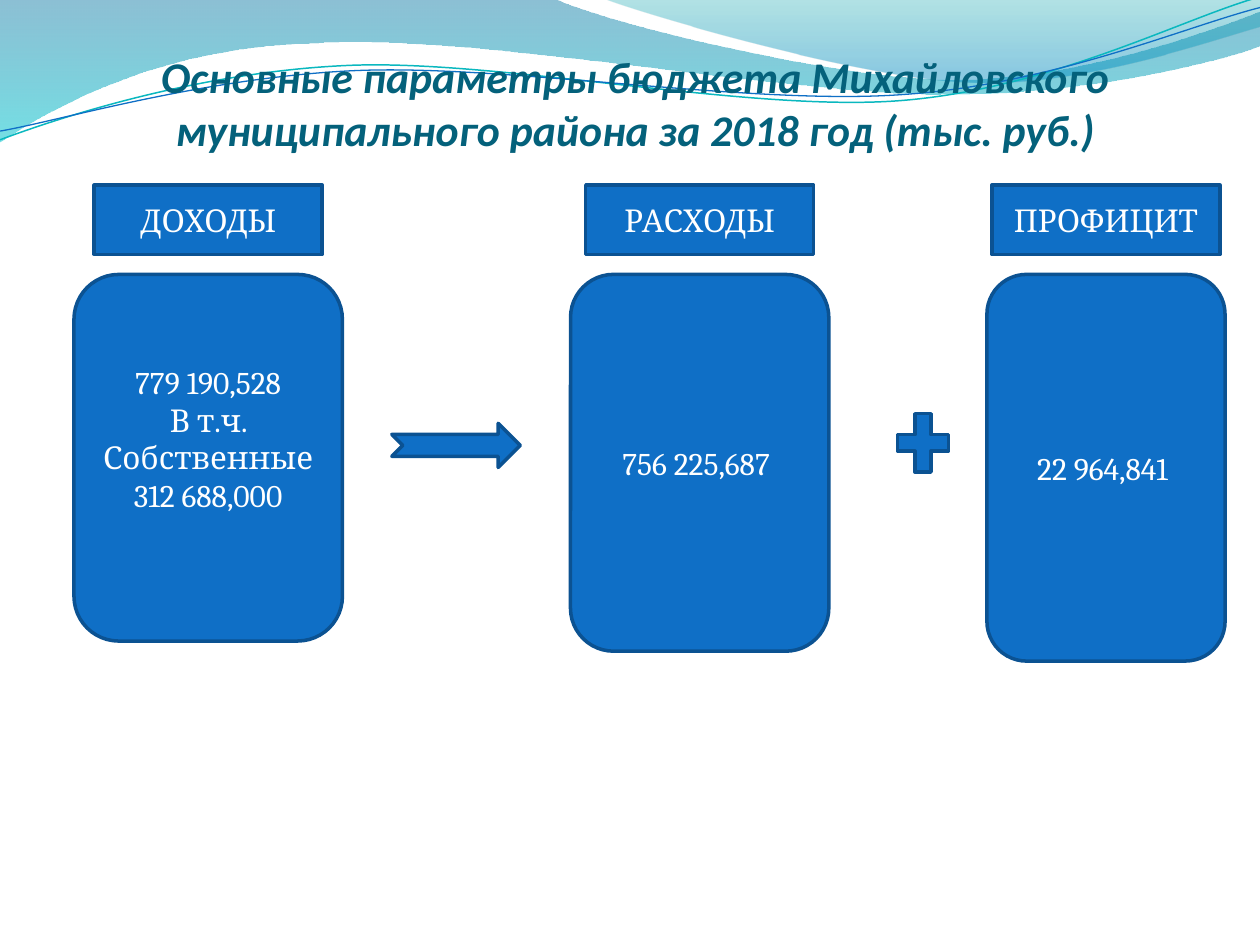
from dataclasses import dataclass

from lxml.etree import SubElement
from pptx import Presentation
from pptx.dml.color import RGBColor
from pptx.enum.shapes import MSO_SHAPE
from pptx.enum.text import MSO_ANCHOR, PP_ALIGN
from pptx.oxml.ns import qn
from pptx.util import Pt


@dataclass(frozen=True)
class Theme:
    title_color: str = "04617B"
    fill: str = "0F6FC6"
    border: str = "0B5292"
    text: str = "FFFFFF"
    teal: str = "0AB8BF"
    title_font: str = "Calibri"
    body_font: str = "Cambria"
    title_size: float = 25
    body_size: float = 18
    border_width: float = 2


THEME = Theme()
TITLE = "Основные параметры бюджета Михайловского муниципального района за 2018 год (тыс. руб.)"
COLUMNS = [
    {"label": "ДОХОДЫ", "center": 119, "width": 153.4, "height": 209.5, "bottom_inset": 25.6,
     "lines": ["779 190,528", "В т.ч. Собственные", "312 688,000"]},
    {"label": "РАСХОДЫ", "center": 399.8, "width": 147.6, "height": 215.3, "bottom_inset": 3.6,
     "lines": ["756 225,687 "]},
    {"label": "ПРОФИЦИТ", "center": 632, "width": 136.1, "height": 221, "bottom_inset": 3.6,
     "lines": ["22 964,841 "]},
]
SIGNS = [
    (MSO_SHAPE.NOTCHED_RIGHT_ARROW, 223.9, 241.9, 73.4, 25.2),
    (MSO_SHAPE.MATH_PLUS, 507.6, 230.4, 39.6, 45.4),
]
LABEL_TOP, LABEL_WIDTH, LABEL_HEIGHT = 105.8, 130.3, 39.6
BOX_TOP = 156.8

WAVES = [
    {"start": (0, 0),
     "steps": [(316.8, -0.7),
               (342.7, 12.2, 478.1, 45.4, 545.8, 45.4),
               (614.2, 45.4, 689.8, 18.7, 720, 6.5),
               (720.7, 25.9),
               (707.8, 31.7, 626.4, 54.7, 537.1, 54),
               (447.8, 54, 275, 20.2, 185, 24.5),
               (92.9, 25.9, 33.1, 59.8, -0.7, 81.4),
               (0, 0)],
     "stops": [(0, "0074A1", 45), (1, "00C6CF", 55)]},
    {"start": (344.9, -0.7),
     "steps": [(366.5, 7.9, 491, 44.6, 553.7, 46.8),
               (616.3, 49.7, 691.9, 23, 720, 15.1),
               (720, 0),
               (344.9, -0.7)],
     "stops": [(0, "00A1A9", 30), (0.8, "008BBF", 45)]},
    {"start": (0, 79.9),
     "steps": [(34.6, 67, 113.8, 41, 199.4, 37.4),
               (284.4, 33.8, 427, 64.1, 513.4, 57.6),
               (599.8, 51.1, 675.4, 10.8, 718.6, -1.4)],
     "line": (THEME.teal, 0.85)},
    {"start": (0, 74.9),
     "steps": [(33.8, 69.1, 118.1, 43.9, 203.8, 40.3),
               (290.2, 36.7, 429.8, 60.5, 516.2, 54),
               (601.9, 48.2, 677.5, 15.1, 720, 4.3)],
     "line": (THEME.fill, 0.75)},
]


def rgb(value):
    return RGBColor.from_string(value)


def set_line(shape, color, width):
    shape.line.color.rgb = rgb(color)
    shape.line.width = Pt(width)


def draw_outline(slide, start, steps, closed):
    builder = slide.shapes.build_freeform(Pt(start[0]), Pt(start[1]), scale=1.0)
    for step in steps:
        points = [(Pt(x), Pt(y)) for x, y in zip(step[::2], step[1::2])]
        builder.add_line_segments(points, close=False)
    if closed:
        builder.add_line_segments([], close=True)
    shape = builder.convert_to_shape()
    segments = iter(list(shape.element.iter(qn("a:lnTo"))))
    for step in steps:
        group = [next(segments) for _ in step[::2]]
        if len(group) == 3:
            outline = group[0].getparent()
            curve = SubElement(outline, qn("a:cubicBezTo"))
            group[0].addprevious(curve)
            for segment in group:
                curve.append(segment[0])
                outline.remove(segment)
    return shape


def add_wave(slide, wave):
    shape = draw_outline(slide, wave["start"], wave["steps"], "stops" in wave)
    shape.shadow.inherit = False
    if "line" in wave:
        shape.fill.background()
        set_line(shape, *wave["line"])
        return
    shape.line.fill.background()
    shape.fill.gradient()
    shape.fill.gradient_angle = 270
    for stop, (position, color, _) in zip(shape.fill.gradient_stops, wave["stops"]):
        stop.position = position
        stop.color.rgb = rgb(color)
    for element, (_, _, opacity) in zip(shape.element.iter(qn("a:srgbClr")), wave["stops"]):
        SubElement(element, qn("a:alpha")).set("val", str(opacity * 1000))


def write(frame, lines, font, size, color, bold=False, italic=False):
    frame.word_wrap = True
    for index, line in enumerate(lines):
        paragraph = frame.add_paragraph() if index else frame.paragraphs[0]
        paragraph.alignment = PP_ALIGN.CENTER
        run = paragraph.add_run()
        run.text = line
        run.font.name = font
        run.font.size = Pt(size)
        run.font.color.rgb = rgb(color)
        run.font.bold = bold
        run.font.italic = italic


def add_block(slide, kind, left, top, width, height, lines=(), bottom_inset=3.6):
    shape = slide.shapes.add_shape(kind, Pt(left), Pt(top), Pt(width), Pt(height))
    shape.shadow.inherit = False
    shape.fill.solid()
    shape.fill.fore_color.rgb = rgb(THEME.fill)
    set_line(shape, THEME.border, THEME.border_width)
    frame = shape.text_frame
    frame.vertical_anchor = MSO_ANCHOR.MIDDLE
    frame.margin_bottom = Pt(bottom_inset)
    write(frame, lines, THEME.body_font, THEME.body_size, THEME.text)


def add_title(slide):
    frame = slide.shapes.add_textbox(Pt(36), Pt(15.1), Pt(653.8), Pt(73.4)).text_frame
    frame.margin_left = frame.margin_right = frame.margin_bottom = 0
    frame.vertical_anchor = MSO_ANCHOR.BOTTOM
    write(frame, [TITLE], THEME.title_font, THEME.title_size, THEME.title_color, True, True)


def main():
    presentation = Presentation()
    presentation.slide_width, presentation.slide_height = Pt(720), Pt(540)
    slide = presentation.slides.add_slide(presentation.slide_layouts[6])
    for wave in WAVES:
        add_wave(slide, wave)
    add_title(slide)
    for column in COLUMNS:
        add_block(slide, MSO_SHAPE.ROUNDED_RECTANGLE, column["center"] - column["width"] / 2, BOX_TOP,
                  column["width"], column["height"], column["lines"], column["bottom_inset"])
    for column in COLUMNS:
        add_block(slide, MSO_SHAPE.RECTANGLE, column["center"] - LABEL_WIDTH / 2, LABEL_TOP,
                  LABEL_WIDTH, LABEL_HEIGHT, [column["label"]])
    for sign in SIGNS:
        add_block(slide, *sign)
    presentation.save("out.pptx")


if __name__ == "__main__":
    main()
